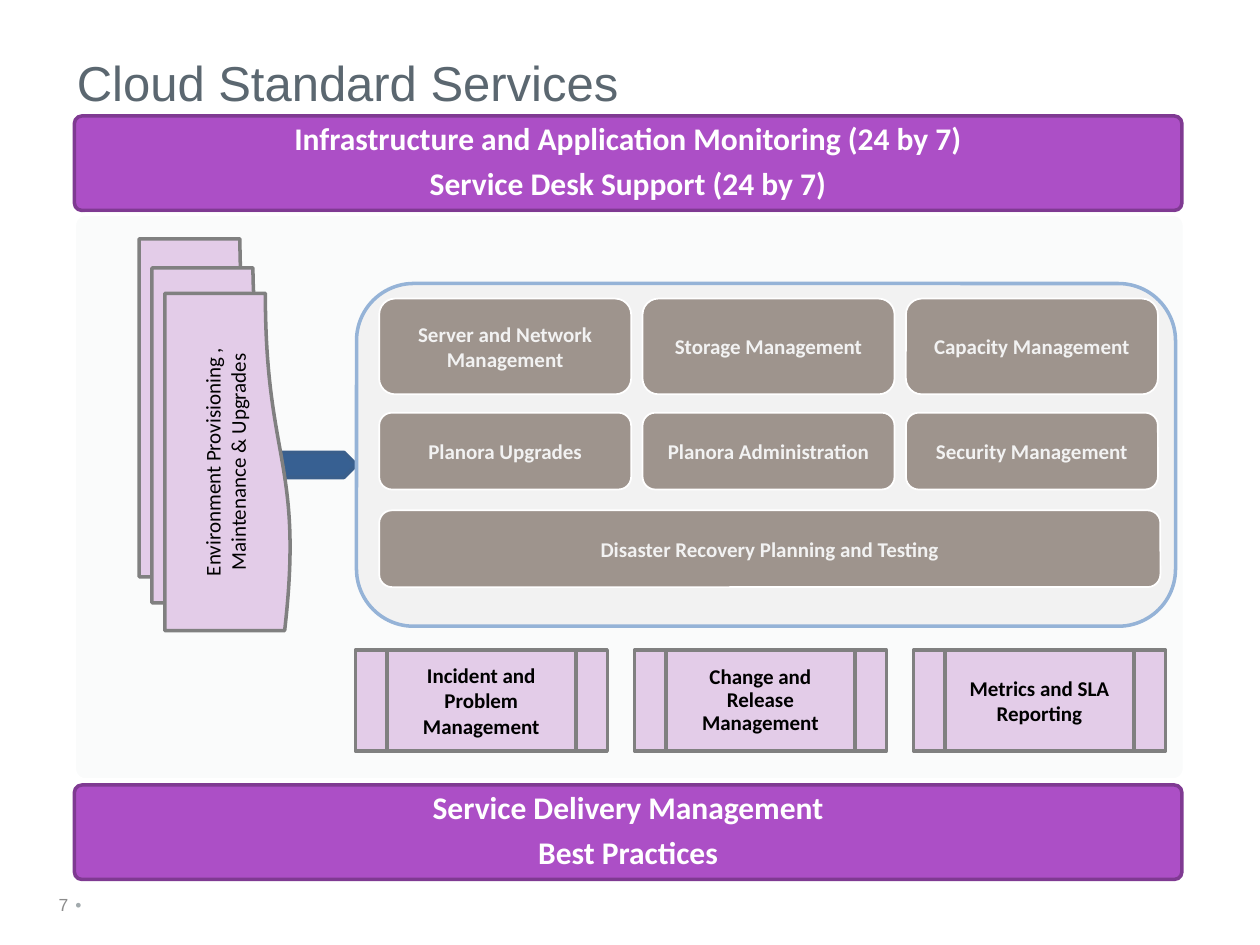
import pptx
import pptx.util
import pptx.dml.color
import pptx.enum.shapes
import pptx.enum.text

KIND = pptx.enum.shapes.MSO_SHAPE
ALIGN = pptx.enum.text.PP_ALIGN
MID = pptx.enum.text.MSO_ANCHOR.MIDDLE

deck = pptx.Presentation()
deck.slide_width = pptx.util.Inches(10)
deck.slide_height = pptx.util.Inches(7.5)
page = deck.slides.add_slide(deck.slide_layouts[5])

# Grid of 100 columns by 75 rows
col = deck.slide_width / 100
row = deck.slide_height / 75


def grid(x, y, w, h):
    return int(x * col), int(y * row), int(w * col), int(h * row)


def write(frame, text, size, ink, face="Calibri", bold=False,
          align=ALIGN.CENTER, tight=False):
    frame.text = text
    for para in frame.paragraphs:
        para.alignment = align
        if tight:
            para.line_spacing = 0.9
            para.space_after = pptx.util.Pt(round(size * 0.35, 1))
        for run in para.runs:
            run.font.name = face
            run.font.size = pptx.util.Pt(size)
            run.font.bold = bold
            run.font.color.rgb = pptx.dml.color.RGBColor.from_string(ink)


def block(kind, box, fill, edge, width=2, turn=None):
    shape = page.shapes.add_shape(kind, *grid(*box))
    shape.shadow.inherit = False
    shape.fill.solid()
    shape.fill.fore_color.rgb = pptx.dml.color.RGBColor.from_string(fill)
    shape.line.color.rgb = pptx.dml.color.RGBColor.from_string(edge)
    shape.line.width = pptx.util.Pt(width)
    if turn is not None:
        shape.adjustments[0] = turn
    shape.text_frame.word_wrap = True
    shape.text_frame.vertical_anchor = MID
    return shape


# Title
title = page.shapes.title
title.left, title.top, title.width, title.height = grid(5.1, 3.7, 92.9, 12.5)
title.text_frame.vertical_anchor = pptx.enum.text.MSO_ANCHOR.TOP
write(title.text_frame, "Cloud Standard Services", 28, "5B6770", "Arial",
      align=ALIGN.LEFT)

# Page number and its dot
for text, box, ink, align in [
        ("•", (5, 70.5, 2.5, 2.7), "A2AAAD", ALIGN.LEFT),
        ("7", (2.6, 70.5, 3.8, 2.5), "8C8C8C", ALIGN.RIGHT)]:
    note = page.shapes.add_textbox(*grid(*box))
    note.text_frame.word_wrap = text == "7"
    if text == "7":
        note.text_frame.vertical_anchor = MID
    write(note.text_frame, text, 10, ink, "Arial", align=align)

# Purple bars above and below
for top, text in [
        (62.3, "Service Delivery Management\nBest Practices"),
        (9.2, "Infrastructure and Application Monitoring (24 by 7)\n"
              "Service Desk Support (24 by 7)")]:
    bar = block(KIND.ROUNDED_RECTANGLE, (5.9, top, 87.9, 7.5),
                "AC4FC6", "7F3A92", turn=0.08)
    write(bar.text_frame, text, 18, "FFFFFF", bold=True, tight=True)

# Pale panel, arrow and stacked pages
block(KIND.ROUNDED_RECTANGLE, (5.9, 17, 88.1, 44.9), "FAFBFB", "FFFFFF",
      turn=0.02)
block(KIND.PENTAGON, (22.3, 35.9, 6, 2), "376092", "3A5F8C")
stack = block(KIND.FLOWCHART_MULTIDOCUMENT, (1.5, 28.5, 31.1, 12),
              "E3CCE8", "808080")
stack.rotation = 270
write(stack.text_frame, "Environment Provisioning , Maintenance & Upgrades",
      12, "000000")

# Process boxes
tasks = ["Incident and Problem Management", "Change and Release Management",
         "Metrics and SLA Reporting"]
for i, text in enumerate(tasks):
    task = block(KIND.FLOWCHART_PREDEFINED_PROCESS,
                 (28.2 + 22.15 * i, 51.6, 20, 8), "E3CCE8", "808080")
    write(task.text_frame, text, 12, "000000", bold=True, tight=i == 1)

# Service tiles in their frame
block(KIND.ROUNDED_RECTANGLE, (28.3, 22.5, 65, 27.2), "F2F2F2", "95B3D7")
rows = [
    (23.7, 7.6, 20, ["Server and Network Management", "Storage Management",
                     "Capacity Management"]),
    (32.75, 6.1, 20, ["Planora Upgrades", "Planora Administration",
                      "Security Management"]),
    (40.5, 6.1, 62, ["Disaster Recovery Planning and Testing"])]
for top, high, wide, names in rows:
    for i, text in enumerate(names):
        tile = block(KIND.ROUNDED_RECTANGLE,
                     (30.1 + 20.9 * i, top, wide, high),
                     "9E948D", "FFFFFF", 1)
        write(tile.text_frame, text, 12, "F2F2F2", bold=True)

deck.save("out.pptx")
